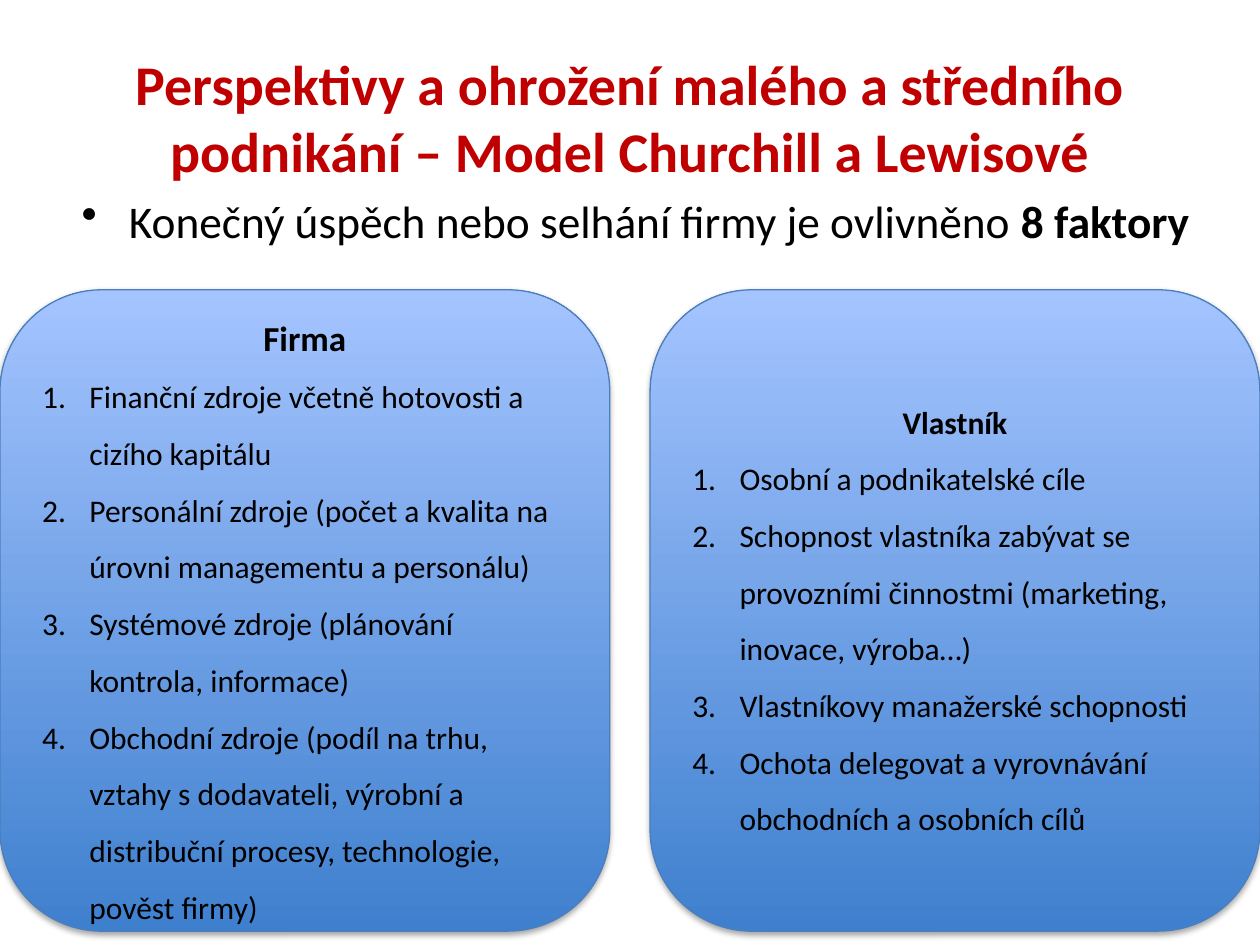
from dataclasses import dataclass

from lxml import etree
from pptx import Presentation
from pptx.dml.color import RGBColor
from pptx.enum.shapes import MSO_SHAPE
from pptx.enum.text import MSO_ANCHOR, PP_ALIGN
from pptx.oxml import parse_xml
from pptx.oxml.ns import qn
from pptx.util import Pt

ROUNDED = MSO_SHAPE.ROUNDED_RECTANGLE
TOP, MIDDLE = MSO_ANCHOR.TOP, MSO_ANCHOR.MIDDLE
LEFT, CENTER = PP_ALIGN.LEFT, PP_ALIGN.CENTER
DRAWING_NS = "http://schemas.openxmlformats.org/drawingml/2006/main"


@dataclass(frozen=True)
class Theme:
    font: str = "Calibri"
    title_color: str = "C00000"
    text_color: str = "000000"
    gradient: tuple[str, str] = ("3F80CE", "A4C4FF")
    outline: str = "4B7EBC"
    title_size: float = 32
    lead_size: float = 25.9
    item_size: float = 18
    hanging_indent: float = 27


@dataclass(frozen=True)
class Frame:
    left: float
    top: float
    width: float
    height: float

    def lengths(self) -> tuple:
        return Pt(self.left), Pt(self.top), Pt(self.width), Pt(self.height)


@dataclass(frozen=True)
class Panel:
    left: float
    heading: str
    heading_size: float
    items: tuple[str, ...]


THEME = Theme()
SLIDE_WIDTH, SLIDE_HEIGHT = 720, 540
PANEL_TOP, PANEL_WIDTH, PANEL_HEIGHT = 165.6, 348.5, 366.5
TITLE_FRAME = Frame(36, 21.6, 648, 90)
LEAD_FRAME = Frame(39.6, 106.6, 667.4, 64)

PANELS = (
    Panel(0, "Firma", 20, (
        "Finanční zdroje včetně hotovosti a cizího kapitálu",
        "Personální zdroje (počet a kvalita na úrovni managementu a personálu)",
        "Systémové zdroje (plánování kontrola, informace)",
        "Obchodní zdroje (podíl na trhu, vztahy s dodavateli, výrobní a "
        "distribuční procesy, technologie, pověst firmy)",
    )),
    Panel(SLIDE_WIDTH - PANEL_WIDTH, "Vlastník", 18, (
        "Osobní a podnikatelské cíle",
        "Schopnost vlastníka zabývat se provozními činnostmi "
        "(marketing, inovace, výroba…)",
        "Vlastníkovy manažerské schopnosti",
        "Ochota delegovat a vyrovnávání obchodních a osobních cílů",
    )),
)

SHADOW_XML = (
    f'<a:outerShdw xmlns:a="{DRAWING_NS}" blurRad="{Pt(3.1)}" dist="{Pt(1.8)}" '
    'dir="5400000" rotWithShape="0"><a:srgbClr val="000000">'
    '<a:alpha val="35000"/></a:srgbClr></a:outerShdw>'
)


def add_run(para, text: str, size: float, bold: bool = False,
            color: str = THEME.text_color) -> None:
    span = para.add_run()
    span.text = text
    formats = {"name": THEME.font, "size": Pt(size), "bold": bold}
    for name, value in formats.items():
        setattr(span.font, name, value)
    span.font.color.rgb = RGBColor.from_string(color)


def set_marker(para, tag: str, **attributes: str) -> None:
    """Give the paragraph a hanging indent and a bullet or number."""
    properties = para._p.get_or_add_pPr()
    properties.set("marL", str(Pt(THEME.hanging_indent)))
    properties.set("indent", str(Pt(-THEME.hanging_indent)))
    marker = etree.SubElement(properties, qn(tag))
    for name, value in attributes.items():
        marker.set(name, value)


def add_text_box(slide, frame: Frame, anchor, alignment):
    """Add a wrapped text box and return its first paragraph."""
    box = slide.shapes.add_textbox(*frame.lengths())
    box.text_frame.word_wrap = True
    box.text_frame.vertical_anchor = anchor
    para = box.text_frame.paragraphs[0]
    para.alignment = alignment
    return para


def style_panel(shape) -> None:
    shape.fill.gradient()
    shape.fill.gradient_angle = 90
    for stop, color in zip(shape.fill.gradient_stops, THEME.gradient):
        stop.color.rgb = RGBColor.from_string(color)
    shape.line.color.rgb = RGBColor.from_string(THEME.outline)
    shape.line.width = Pt(0.75)
    shape.shadow.inherit = False
    effects = shape._element.spPr.find(qn("a:effectLst"))
    effects.append(parse_xml(SHADOW_XML))


def add_panel(slide, panel: Panel) -> None:
    frame = Frame(panel.left, PANEL_TOP, PANEL_WIDTH, PANEL_HEIGHT)
    shape = slide.shapes.add_shape(ROUNDED, *frame.lengths())
    style_panel(shape)
    text = shape.text_frame
    text.word_wrap = True
    text.vertical_anchor = MIDDLE

    heading = text.paragraphs[0]
    heading.alignment = CENTER
    add_run(heading, panel.heading, panel.heading_size, bold=True)
    for item in panel.items:
        para = text.add_paragraph()
        para.alignment = LEFT
        set_marker(para, "a:buAutoNum", type="arabicPeriod")
        add_run(para, item, THEME.item_size)
    for para in text.paragraphs:
        para.line_spacing = 1.5


def main() -> None:
    deck = Presentation()
    deck.slide_width, deck.slide_height = Pt(SLIDE_WIDTH), Pt(SLIDE_HEIGHT)
    page = deck.slides.add_slide(deck.slide_layouts[6])

    title = add_text_box(page, TITLE_FRAME, MIDDLE, CENTER)
    add_run(title, "Perspektivy a ohrožení malého a středního podnikání – "
            "Model Churchill a Lewisové", THEME.title_size, True,
            THEME.title_color)

    lead = add_text_box(page, LEAD_FRAME, TOP, LEFT)
    set_marker(lead, "a:buChar", char="•")
    add_run(lead, "Konečný úspěch nebo selhání firmy je ovlivněno ",
            THEME.lead_size)
    add_run(lead, "8 faktory", THEME.lead_size, bold=True)

    for panel in PANELS:
        add_panel(page, panel)
    deck.save("out.pptx")


if __name__ == "__main__":
    main()
